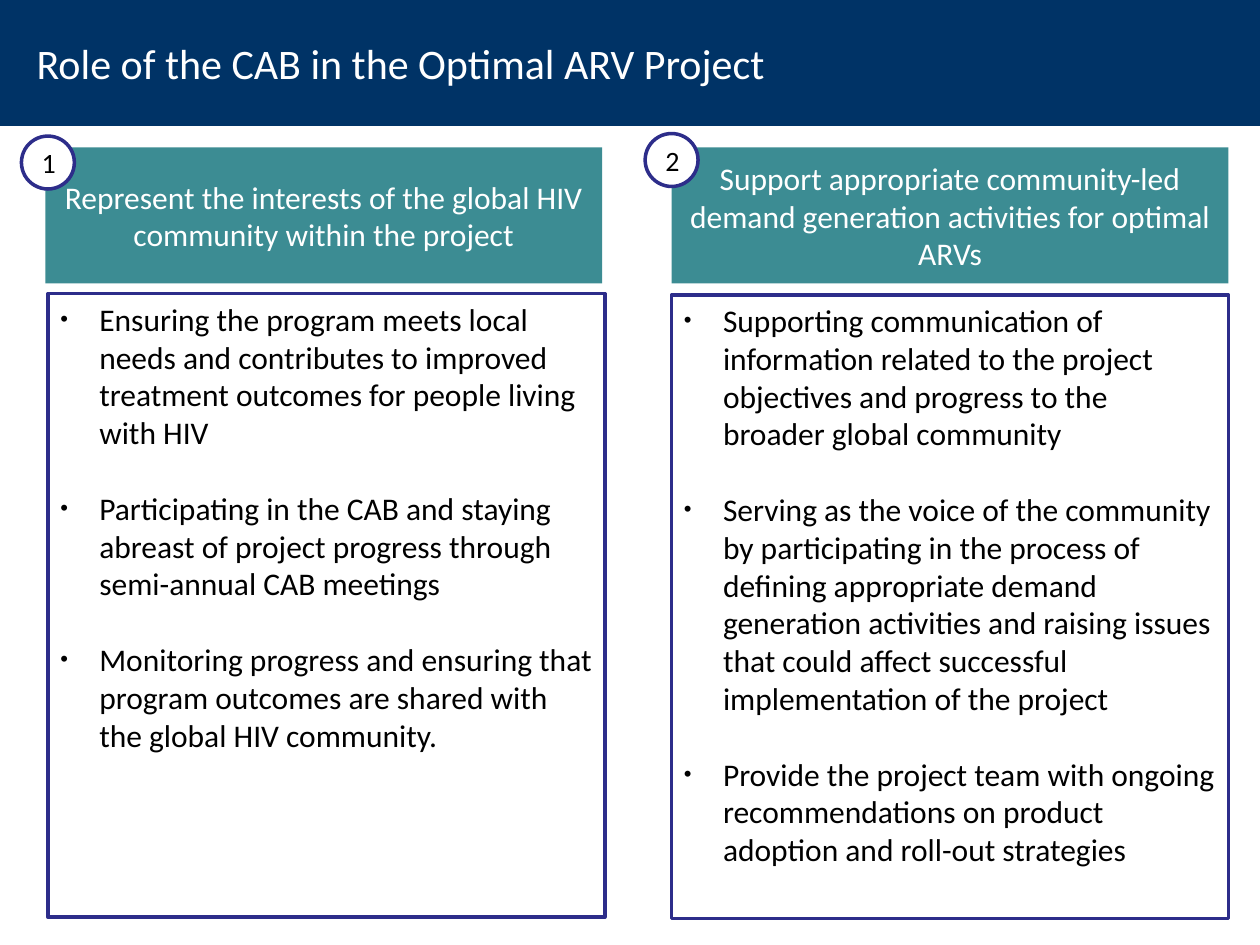
"""Build the slide on the role of the CAB in the Optimal ARV Project."""
from lxml.etree import SubElement
from pptx import Presentation
from pptx.dml.color import RGBColor
from pptx.enum.shapes import MSO_SHAPE as Shape
from pptx.enum.text import MSO_ANCHOR as Anchor, MSO_AUTO_SIZE as AutoSize, PP_ALIGN as Align
from pptx.oxml.ns import qn
from pptx.util import Inches, Pt

NAVY = RGBColor(0x00, 0x33, 0x66)
TEAL = RGBColor(0x3C, 0x8C, 0x93)
INDIGO = RGBColor(0x2D, 0x2D, 0x8A)
WHITE = RGBColor(0xFF, 0xFF, 0xFF)
BLACK = RGBColor(0x00, 0x00, 0x00)

TITLE = "Role of the CAB in the Optimal ARV Project"
COLUMNS = [
    {
        "number": "1",
        "heading": "Represent the interests of the global HIV community within the project",
        "points": [
            "Ensuring the program meets local needs and contributes to improved "
            "treatment outcomes for people living\nwith HIV",
            "Participating in the CAB and staying abreast of project progress through "
            "semi-annual CAB meetings",
            "Monitoring progress and ensuring that program outcomes are shared with "
            "the global HIV community.",
        ],
        "heading_at": (0.36, 1.17),
        "body_at": (0.38, 2.33),
        "badge_at": (0.17, 1.08),
    },
    {
        "number": "2",
        "heading": "Support appropriate community-led demand generation activities for optimal ARVs",
        "points": [
            "Supporting communication of information related to the project objectives "
            "and progress to the broader global community",
            "Serving as the voice of the community by participating in the process of "
            "defining appropriate demand\ngeneration activities and raising issues that "
            "could affect successful implementation of the project",
            "Provide the project team with ongoing recommendations on product adoption "
            "and roll-out strategies",
        ],
        "heading_at": (5.33, 1.17),
        "body_at": (5.33, 2.34),
        "badge_at": (5.12, 1.06),
    },
]
HEADING_SIZE = (4.42, 1.08)
BODY_SIZE = (4.42, 4.95)
BADGE_SIZE = (0.42, 0.42)
BULLET_INDENT = Inches(0.31)


def write(shape, texts, size, color, align=Align.LEFT, anchor=Anchor.MIDDLE):
    frame = shape.text_frame
    frame.word_wrap = True
    frame.auto_size = AutoSize.NONE
    frame.vertical_anchor = anchor
    font_format = {"name": "Calibri", "size": Pt(size), "bold": False}
    for index, text in enumerate(texts):
        para = frame.paragraphs[0] if index == 0 else frame.add_paragraph()
        para.text = text
        para.alignment = align
        for span in para.runs:
            for name, value in font_format.items():
                setattr(span.font, name, value)
            span.font.color.rgb = color
    return frame.paragraphs


def add_box(page, kind, at, size, fill, outline=None):
    box = page.shapes.add_shape(kind, *map(Inches, at + size))
    box.shadow.inherit = False
    box.fill.solid()
    box.fill.fore_color.rgb = fill
    if outline is None:
        box.line.fill.background()
    else:
        box.line.color.rgb = outline
        box.line.width = Pt(2)
    return box


def add_bullet(para):
    props = para._p.get_or_add_pPr()
    props.set("marL", str(BULLET_INDENT))
    props.set("indent", str(-BULLET_INDENT))
    SubElement(props, qn("a:buSzPct")).set("val", "70000")
    SubElement(props, qn("a:buFont")).set("typeface", "Arial")
    SubElement(props, qn("a:buChar")).set("char", "•")


def add_title(page):
    title = page.shapes.title
    title.left, title.top, title.width, title.height = map(Inches, (0, 0, 10, 1))
    title.fill.solid()
    title.fill.fore_color.rgb = NAVY
    title.text_frame.margin_left = Inches(0.29)
    write(title, [TITLE], 24, WHITE)


def add_column(page, column):
    body = add_box(page, Shape.RECTANGLE, column["body_at"], BODY_SIZE, WHITE, INDIGO)
    paras = write(body, column["points"], 18, BLACK, anchor=Anchor.TOP)
    for para in paras:
        para.space_after = Pt(21.6)
        add_bullet(para)
    heading = add_box(page, Shape.RECTANGLE, column["heading_at"], HEADING_SIZE, TEAL)
    write(heading, [column["heading"]], 18, WHITE, Align.CENTER)
    badge = add_box(page, Shape.OVAL, column["badge_at"], BADGE_SIZE, WHITE, INDIGO)
    write(badge, [column["number"]], 16, BLACK)


def main():
    deck = Presentation()
    deck.slide_width, deck.slide_height = Inches(10), Inches(7.5)
    page = deck.slides.add_slide(deck.slide_layouts.get_by_name("Title Only"))
    add_title(page)
    for column in COLUMNS:
        add_column(page, column)
    deck.save("out.pptx")


if __name__ == "__main__":
    main()
